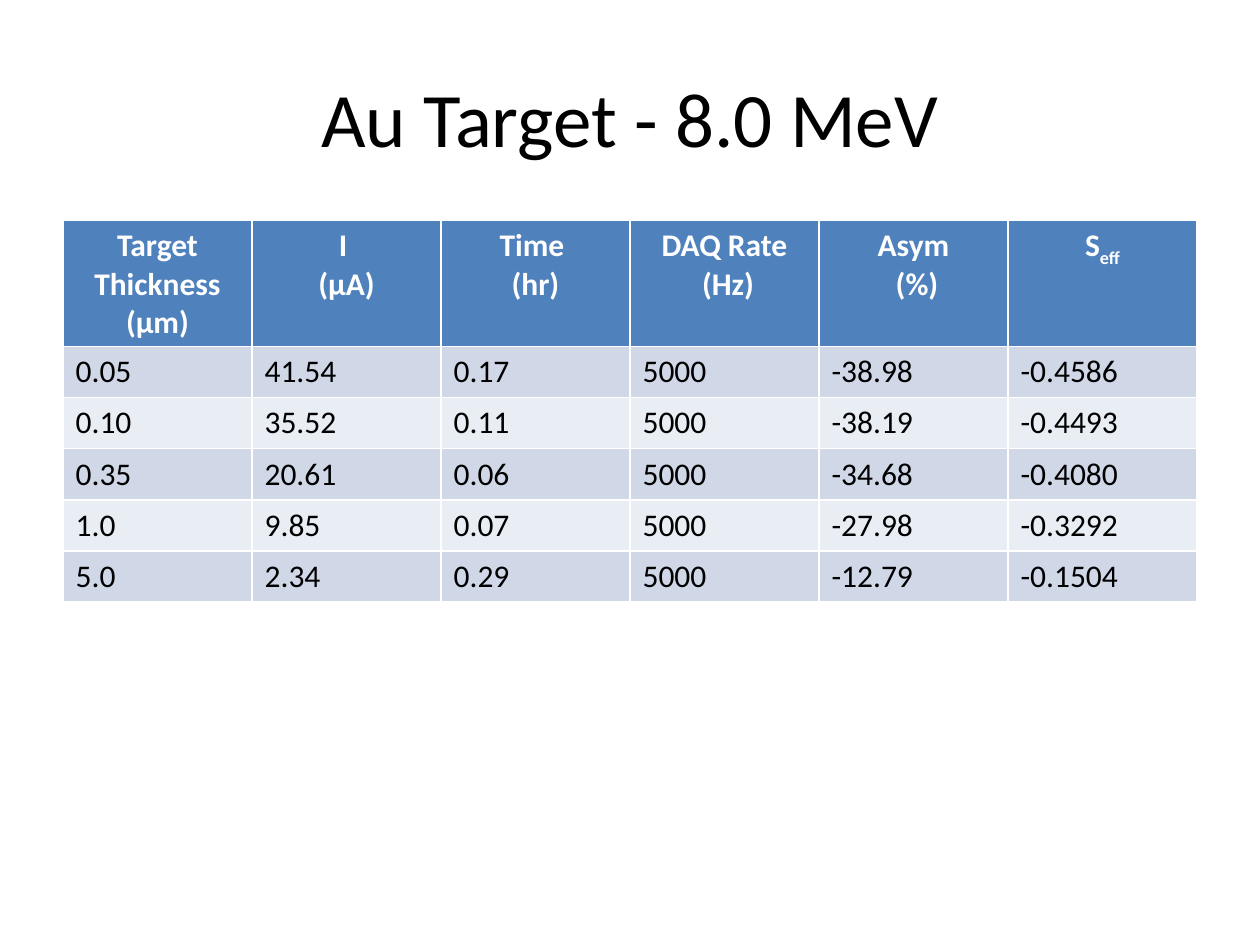
"""Build a slide with a table of gold target asymmetries at 8.0 MeV."""
from pptx import Presentation
from pptx.dml.color import RGBColor as RGB
from pptx.enum.text import MSO_ANCHOR as Anchor, PP_ALIGN as Align
from pptx.util import Pt

WHITE = RGB(0xFF, 0xFF, 0xFF)
BLACK = RGB(0x00, 0x00, 0x00)
BLUE = RGB(0x4F, 0x81, 0xBD)
BANDS = RGB(0xD0, 0xD8, 0xE8), RGB(0xE9, 0xED, 0xF4)

TITLE = "Au Target - 8.0 MeV"
HEADS = ["Target Thickness (µm)", "I \n(µA)", "Time \n(hr)",
         "DAQ Rate\n (Hz)", "Asym\n (%)", "S"]
SUB = "eff"
ROWS = [
    ("0.05", "41.54", "0.17", "5000", "-38.98", "-0.4586"),
    ("0.10", "35.52", "0.11", "5000", "-38.19", "-0.4493"),
    ("0.35", "20.61", "0.06", "5000", "-34.68", "-0.4080"),
    ("1.0", "9.85", "0.07", "5000", "-27.98", "-0.3292"),
    ("5.0", "2.34", "0.29", "5000", "-12.79", "-0.1504"),
]

LEFT, WIDTH = Pt(36), Pt(648)
HEAD_TALL, ROW_TALL = Pt(72), Pt(29.2)
BIG = dict(size=Pt(44), bold=False)
HEAD = dict(size=Pt(18), bold=True)
BODY = dict(size=Pt(18), bold=False)


def style(frame, fmt, color, align):
    for par in frame.paragraphs:
        par.alignment = align
        for run in par.runs:
            for key, val in dict(fmt, name="Calibri").items():
                setattr(run.font, key, val)
            run.font.color.rgb = color


def add_title(slide):
    frame = slide.shapes.add_textbox(LEFT, Pt(21.6), WIDTH, Pt(90)).text_frame
    frame.word_wrap = True
    frame.vertical_anchor = Anchor.MIDDLE
    frame.text = TITLE
    style(frame, BIG, BLACK, Align.CENTER)


def add_grid(slide):
    tall = HEAD_TALL + len(ROWS) * ROW_TALL
    grid = slide.shapes.add_table(
        len(ROWS) + 1, len(HEADS), LEFT, Pt(126), WIDTH, tall).table
    for r, texts in enumerate([HEADS, *ROWS]):
        grid.rows[r].height = ROW_TALL if r else HEAD_TALL
        fill = BANDS[(r - 1) % 2] if r else BLUE
        look = (BODY, BLACK, Align.LEFT) if r else (HEAD, WHITE, Align.CENTER)
        for c, text in enumerate(texts):
            cell = grid.cell(r, c)
            cell.fill.solid()
            cell.fill.fore_color.rgb = fill
            cell.text = text
            if text == "S":
                run = cell.text_frame.paragraphs[0].add_run()
                run.text = SUB
                run.font._element.set("baseline", "-25000")
            style(cell.text_frame, *look)


def main():
    deck = Presentation()
    deck.slide_width, deck.slide_height = Pt(720), Pt(540)
    slide = deck.slides.add_slide(deck.slide_layouts[6])
    add_title(slide)
    add_grid(slide)
    deck.save("out.pptx")


if __name__ == "__main__":
    main()
